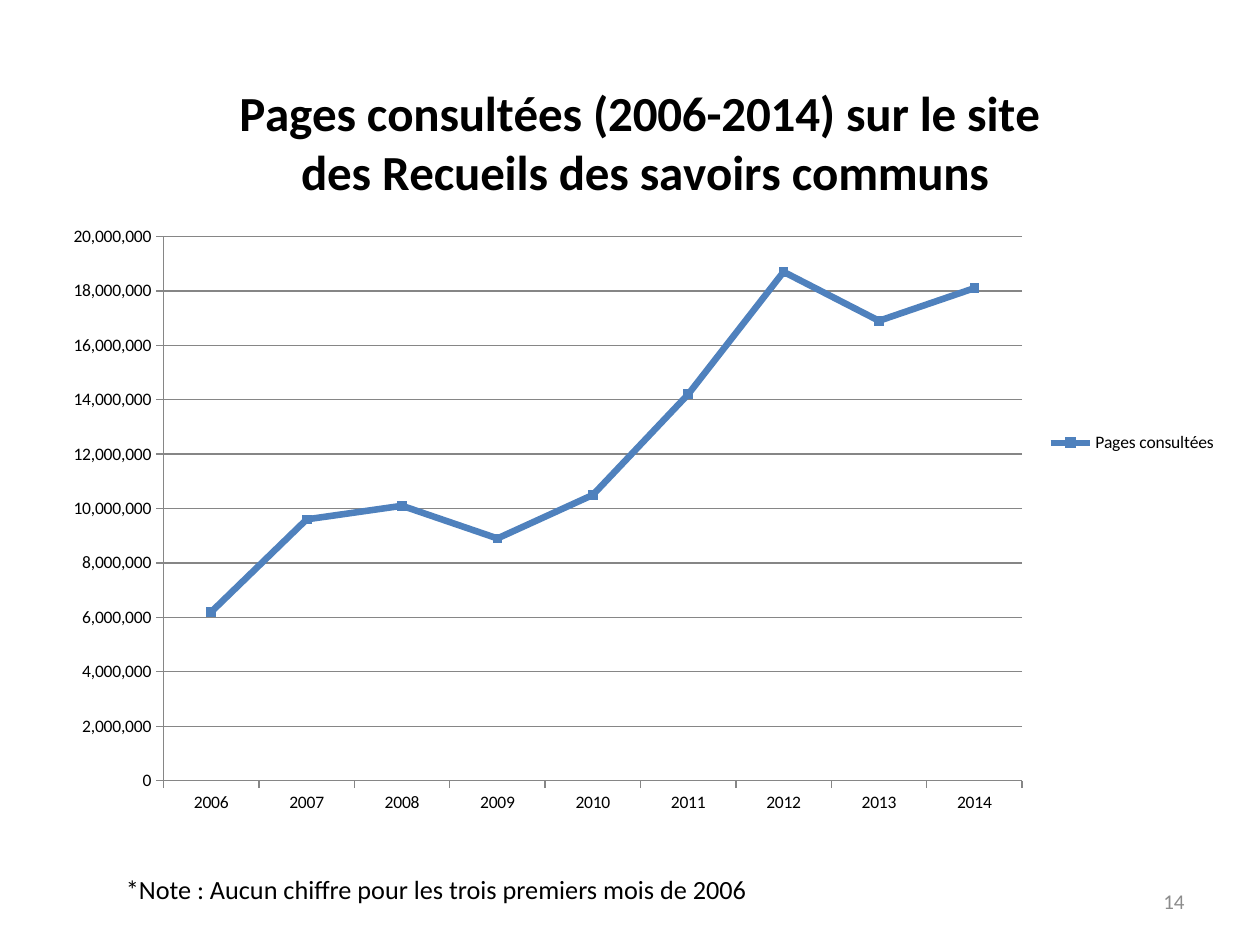
from lxml import etree
from pptx import Presentation
from pptx.chart.data import CategoryChartData
from pptx.dml.color import RGBColor
from pptx.enum.chart import XL_CHART_TYPE, XL_LEGEND_POSITION, XL_MARKER_STYLE, XL_TICK_MARK
from pptx.enum.text import MSO_ANCHOR, PP_ALIGN
from pptx.oxml.ns import qn
from pptx.util import Inches, Pt

LINE = XL_CHART_TYPE.LINE_MARKERS
RIGHT = XL_LEGEND_POSITION.RIGHT
SQUARE = XL_MARKER_STYLE.SQUARE
OUT = XL_TICK_MARK.OUTSIDE

TITLE = ["Pages consultées (2006-2014) sur le site", " des Recueils des savoirs communs"]
SERIES = "Pages consultées"
YEARS = range(2006, 2015)
MILLIONS = [6.2, 9.6, 10.1, 8.9, 10.5, 14.2, 18.7, 16.9, 18.1]
NOTE = "*Note : Aucun chiffre pour les trois premiers mois de 2006"
PAGE = "14"
BOX = (0.4, 0.46, 9.36, 6.11)
PLOT = (1.3, 1.88, 6.81, 4.32)
HEAD = (1.87, 0.63)
BLUE, GRAY, BLACK = "4F81BD", "868686", "000000"


def color(code):
    return RGBColor.from_string(code)


def style(font, size, code=BLACK, bold=False):
    font.name = "Calibri"
    font.size = Pt(size)
    font.bold = bold
    font.color.rgb = color(code)


def stroke(line, code, width):
    line.color.rgb = color(code)
    line.width = Pt(width)


def place(parent, after, spot, inner=False):
    for old in parent.findall(qn("c:layout")):
        parent.remove(old)
    layout = etree.Element(qn("c:layout"))
    manual = etree.SubElement(layout, qn("c:manualLayout"))
    tags = [("layoutTarget", "inner")] if inner else []
    tags += [("xMode", "edge"), ("yMode", "edge")]
    start = [spot[i] - BOX[i] for i in (0, 1)]
    parts = start + list(spot[2:])
    tags += [(tag, f"{part / full:.3f}")
             for tag, part, full in zip("xywh", parts, BOX[2:] * 2)]
    for tag, val in tags:
        etree.SubElement(manual, qn("c:" + tag)).set("val", val)
    if after is None:
        parent.insert(0, layout)
    else:
        after.addnext(layout)


def label(slide, box, text, size, code, align, anchor, wrap):
    frame = slide.shapes.add_textbox(*map(Inches, box)).text_frame
    frame.word_wrap = wrap
    frame.vertical_anchor = anchor
    para = frame.paragraphs[0]
    para.text = text
    para.alignment = align
    style(para.font, size, code)


def draw(slide):
    data = CategoryChartData(number_format="#,##0")
    data.categories = [str(year) for year in YEARS]
    data.add_series(SERIES, [round(num * 1_000_000) for num in MILLIONS])
    chart = slide.shapes.add_chart(LINE, *map(Inches, BOX), data).chart
    style(chart.font, 10)

    title = chart.chart_title
    frame = title.text_frame
    for i, text in enumerate(TITLE):
        para = frame.add_paragraph() if i else frame.paragraphs[0]
        para.text = text
        para.alignment = PP_ALIGN.CENTER
        style(para.font, 28, bold=True)
    head = title._element
    place(head, head.find(qn("c:tx")), HEAD)

    chart.has_legend = True
    chart.legend.position = RIGHT
    chart.legend.include_in_layout = False

    for axis in (chart.category_axis, chart.value_axis):
        axis.major_tick_mark = OUT
        stroke(axis.format.line, GRAY, 0.75)
    values = chart.value_axis
    values.minimum_scale = 0
    values.maximum_scale = 20_000_000
    values.major_unit = 2_000_000
    values.tick_labels.number_format = "#,##0"
    values.tick_labels.number_format_is_linked = False
    values.has_major_gridlines = True
    stroke(values.major_gridlines.format.line, GRAY, 0.75)

    plot = chart.plots[0]
    plot.vary_by_categories = False
    line = plot.series[0]
    line.smooth = False
    stroke(line.format.line, BLUE, 3.75)
    mark = line.marker
    mark.style = SQUARE
    mark.size = 5
    mark.format.fill.solid()
    mark.format.fill.fore_color.rgb = color(BLUE)
    stroke(mark.format.line, BLUE, 0.75)
    place(chart._chartSpace.chart.plotArea, None, PLOT, True)


def main():
    deck = Presentation()
    deck.slide_width, deck.slide_height = Inches(10), Inches(7.5)
    slide = deck.slides.add_slide(deck.slide_layouts[6])
    draw(slide)
    label(slide, (0.9, 6.88, 5.19, 0.35), NOTE, 15, BLACK,
          PP_ALIGN.LEFT, MSO_ANCHOR.TOP, False)
    label(slide, (7.17, 6.95, 2.33, 0.4), PAGE, 12, "8C8C8C",
          PP_ALIGN.RIGHT, MSO_ANCHOR.MIDDLE, True)
    deck.save("out.pptx")


if __name__ == "__main__":
    main()
